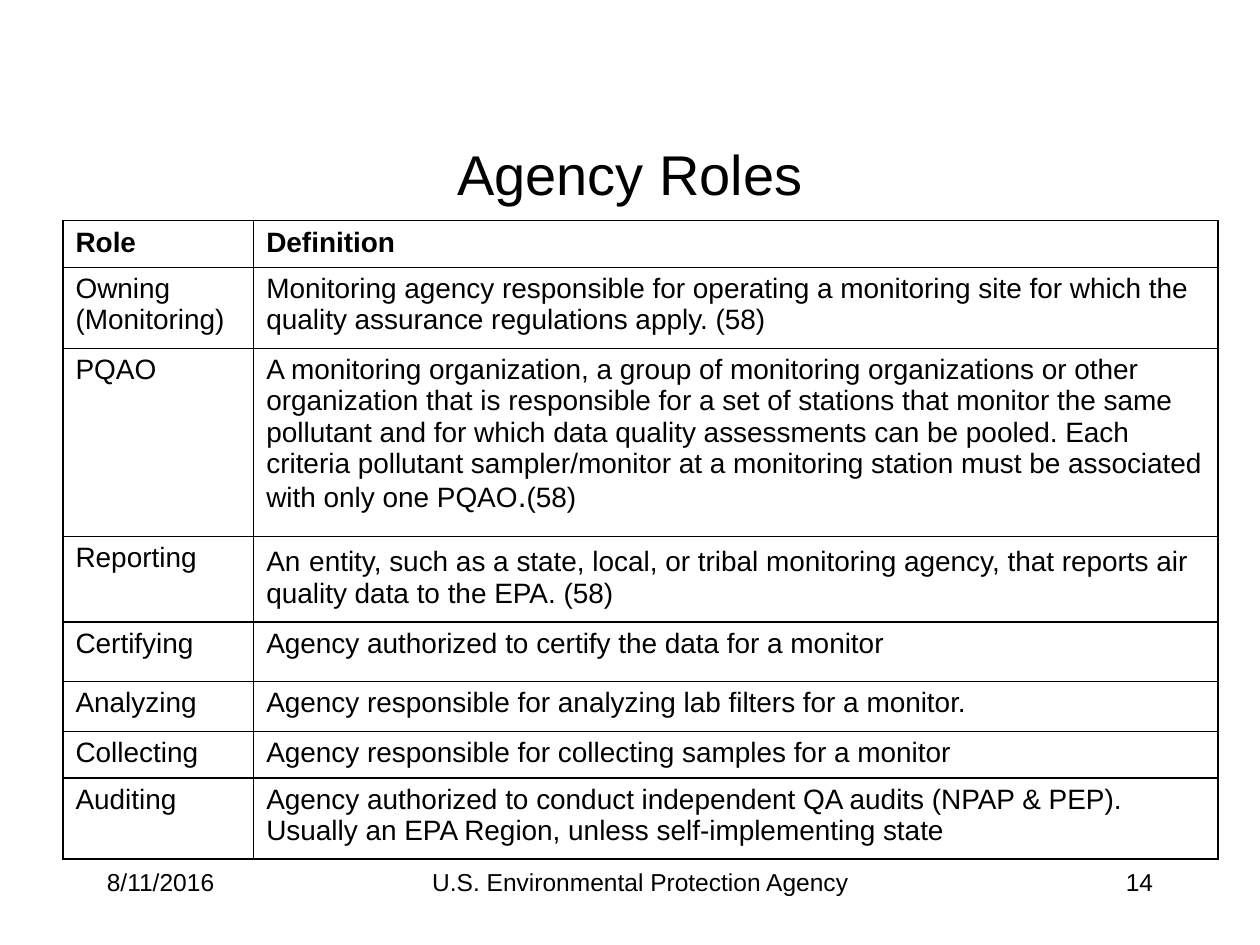
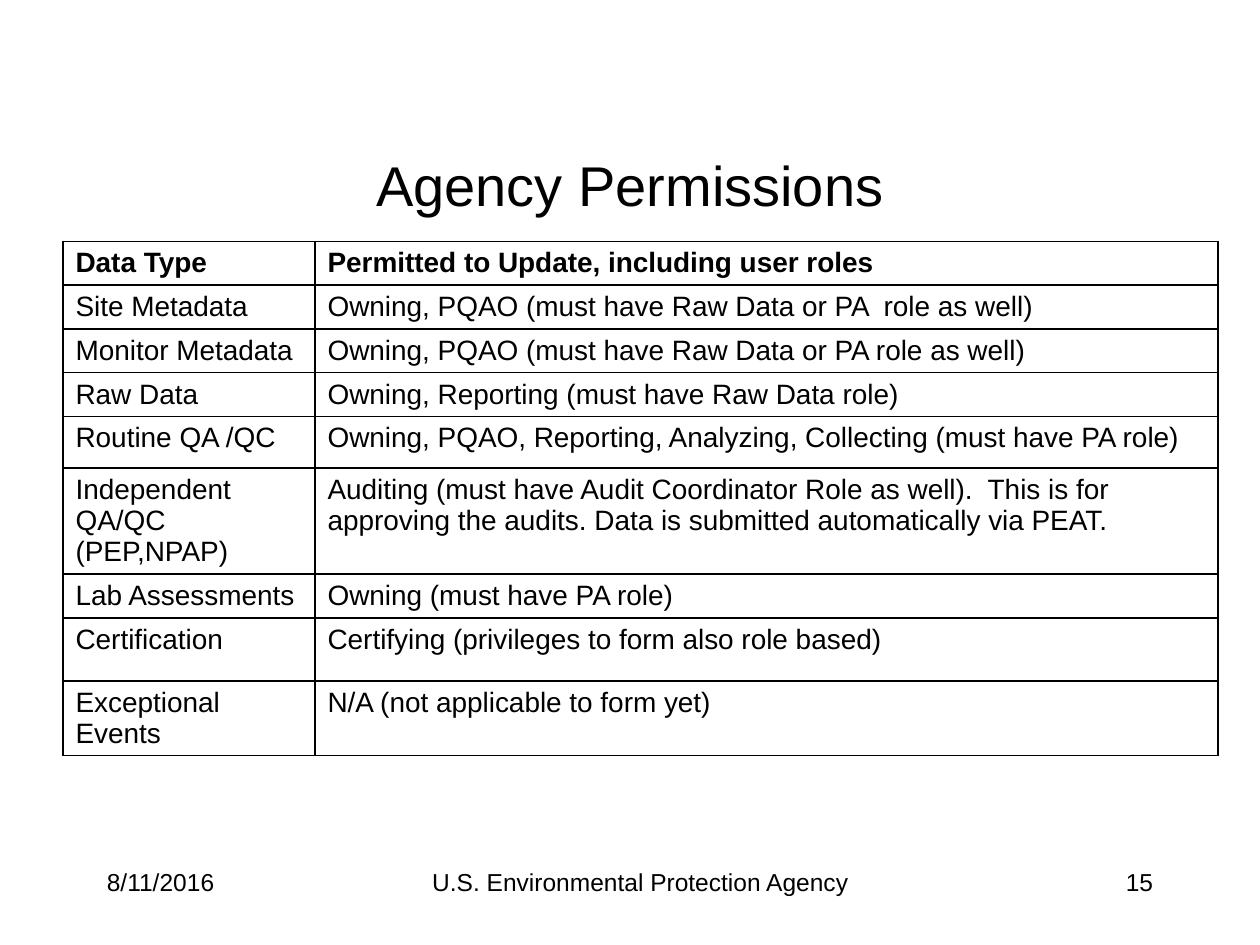
from dataclasses import dataclass

from lxml import etree
from pptx import Presentation
from pptx import util as u
from pptx.dml import color
from pptx.enum import text
from pptx.oxml import ns

COLOURS = {"ink": "000000", "paper": "FFFFFF"}
FONT = "Arial"
TITLE_SIZE, BODY_SIZE, LARGE_SIZE, FOOTER_SIZE = 32, 16, 18, 14
TITLE_ONLY = 5
TABLE_LEFT, TABLE_WIDTH = 36, 660
FOOTER_TOP, FOOTER_HEIGHT = 492, 36


@dataclass(frozen=True)
class Row:
    height: float
    label: str
    pieces: tuple[str, ...]


@dataclass(frozen=True)
class TableSlide:
    number: int
    title: str
    title_top: float
    table_top: float
    label_width: float
    rows: tuple[Row, ...]


@dataclass(frozen=True)
class FooterPart:
    left: float
    width: float
    alignment: text.PP_ALIGN
    wording: str


FOOTER = (
    FooterPart(54, 150, text.PP_ALIGN.LEFT, "8/11/2016"),
    FooterPart(150, 432, text.PP_ALIGN.CENTER, "U.S. Environmental Protection Agency"),
    FooterPart(516, 150, text.PP_ALIGN.RIGHT, "{number}"),
)

SLIDES = (
    TableSlide(14, "Agency Roles", 78, 126, 109, (
        Row(26.8, "Role", ("Definition",)),
        Row(46.3, "Owning (Monitoring)", (
            "Monitoring agency responsible for operating a monitoring site for which "
            "the quality assurance regulations apply. (58)",)),
        Row(107.4, "PQAO", (
            "A monitoring organization, a group of monitoring organizations or other "
            "organization that is responsible for a set of stations that monitor the same "
            "pollutant and for which data quality assessments can be pooled. Each criteria "
            "pollutant sampler/monitor at a monitoring station must be associated with "
            "only one PQAO", ".", "(58)")),
        Row(49, "Reporting", (
            "An", " ", "entity, such as a state, local, or tribal monitoring agency, that "
            "reports air quality data to the EPA. (58)")),
        Row(34, "Certifying", ("Agency authorized to certify the data for a monitor",)),
        Row(28.5, "Analyzing", ("Agency responsible for analyzing lab filters for a monitor.",)),
        Row(26.8, "Collecting", ("Agency responsible for collecting samples for a monitor",)),
        Row(46.3, "Auditing", (
            "Agency authorized to conduct independent QA audits (NPAP & PEP). "
            "Usually an EPA Region, unless self-implementing state",)),
    )),
    TableSlide(15, "Agency Permissions", 84, 138, 144, (
        Row(25, "Data Type", ("Permitted to Update, including user roles",)),
        Row(25, "Site Metadata", ("Owning, PQAO (must have Raw Data or PA  role as well)",)),
        Row(25, "Monitor Metadata", ("Owning, PQAO (must have Raw Data or PA role as well)",)),
        Row(25, "Raw Data", ("Owning, Reporting (must have Raw Data role)",)),
        Row(29.5, "Routine QA /QC", (
            "Owning, PQAO, Reporting, Analyzing, Collecting (must have PA role)",)),
        Row(60.5, "Independent QA/QC (PEP,NPAP)", (
            "Auditing (must have Audit Coordinator Role as well).  This is for "
            "approving the audits. Data is submitted automatically via PEAT.",)),
        Row(25, "Lab Assessments", ("Owning (must have PA role)",)),
        Row(36, "Certification", ("Certifying (privileges to form also role based)",)),
        Row(42.5, "Exceptional Events", ("N/A (not applicable to form yet)",)),
    )),
)


def style_run(run, size: float, bold: bool = False) -> None:
    run.font.name = FONT
    run.font.size = u.Pt(size)
    run.font.bold = bold
    run.font.color.rgb = color.RGBColor.from_string(COLOURS["ink"])


def place(shape, left: float, top: float, width: float, height: float) -> None:
    shape.left, shape.top = u.Pt(left), u.Pt(top)
    shape.width, shape.height = u.Pt(width), u.Pt(height)


def add_title(slide, wording: str, top: float) -> None:
    title = slide.shapes.title
    place(title, 60, top, 600, 42)
    frame = title.text_frame
    frame.text = wording
    frame.vertical_anchor = text.MSO_ANCHOR.MIDDLE
    frame.auto_size = text.MSO_AUTO_SIZE.NONE
    paragraph = frame.paragraphs[0]
    paragraph.alignment = text.PP_ALIGN.CENTER
    style_run(paragraph.runs[0], TITLE_SIZE)


def add_borders(cell) -> None:
    properties = cell._tc.get_or_add_tcPr()
    for side in ("a:lnL", "a:lnR", "a:lnT", "a:lnB"):
        line = etree.SubElement(properties, ns.qn(side), w=str(u.Pt(1)))
        fill = etree.SubElement(line, ns.qn("a:solidFill"))
        etree.SubElement(fill, ns.qn("a:srgbClr"), val=COLOURS["ink"])


def fill_cell(cell, pieces: tuple[str, ...], bold: bool) -> None:
    add_borders(cell)
    cell.fill.solid()
    cell.fill.fore_color.rgb = color.RGBColor.from_string(COLOURS["paper"])
    paragraph = cell.text_frame.paragraphs[0]
    for index, piece in enumerate(pieces):
        run = paragraph.add_run()
        run.text = piece
        style_run(run, LARGE_SIZE if index % 2 else BODY_SIZE, bold)


def add_role_table(slide, content: TableSlide) -> None:
    height = sum(row.height for row in content.rows)
    frame = slide.shapes.add_table(
        len(content.rows), 2, u.Pt(TABLE_LEFT), u.Pt(content.table_top),
        u.Pt(TABLE_WIDTH), u.Pt(height))
    table = frame.table
    table.first_row = table.horz_banding = False
    table.columns[0].width = u.Pt(content.label_width)
    table.columns[1].width = u.Pt(TABLE_WIDTH - content.label_width)
    for index, row in enumerate(content.rows):
        table.rows[index].height = u.Pt(row.height)
        for column, pieces in enumerate(((row.label,), row.pieces)):
            fill_cell(table.cell(index, column), pieces, bold=index == 0)


def add_footer(slide, number: int) -> None:
    for part in FOOTER:
        shape = slide.shapes.add_textbox(
            u.Pt(part.left), u.Pt(FOOTER_TOP), u.Pt(part.width), u.Pt(FOOTER_HEIGHT))
        frame = shape.text_frame
        frame.word_wrap = True
        frame.text = part.wording.format(number=number)
        paragraph = frame.paragraphs[0]
        paragraph.alignment = part.alignment
        style_run(paragraph.runs[0], FOOTER_SIZE)


def main() -> None:
    presentation = Presentation()
    presentation.slide_width, presentation.slide_height = u.Pt(720), u.Pt(540)
    for content in SLIDES:
        slide = presentation.slides.add_slide(presentation.slide_layouts[TITLE_ONLY])
        add_title(slide, content.title, content.title_top)
        add_role_table(slide, content)
        add_footer(slide, content.number)
    presentation.save("out.pptx")


if __name__ == "__main__":
    main()
